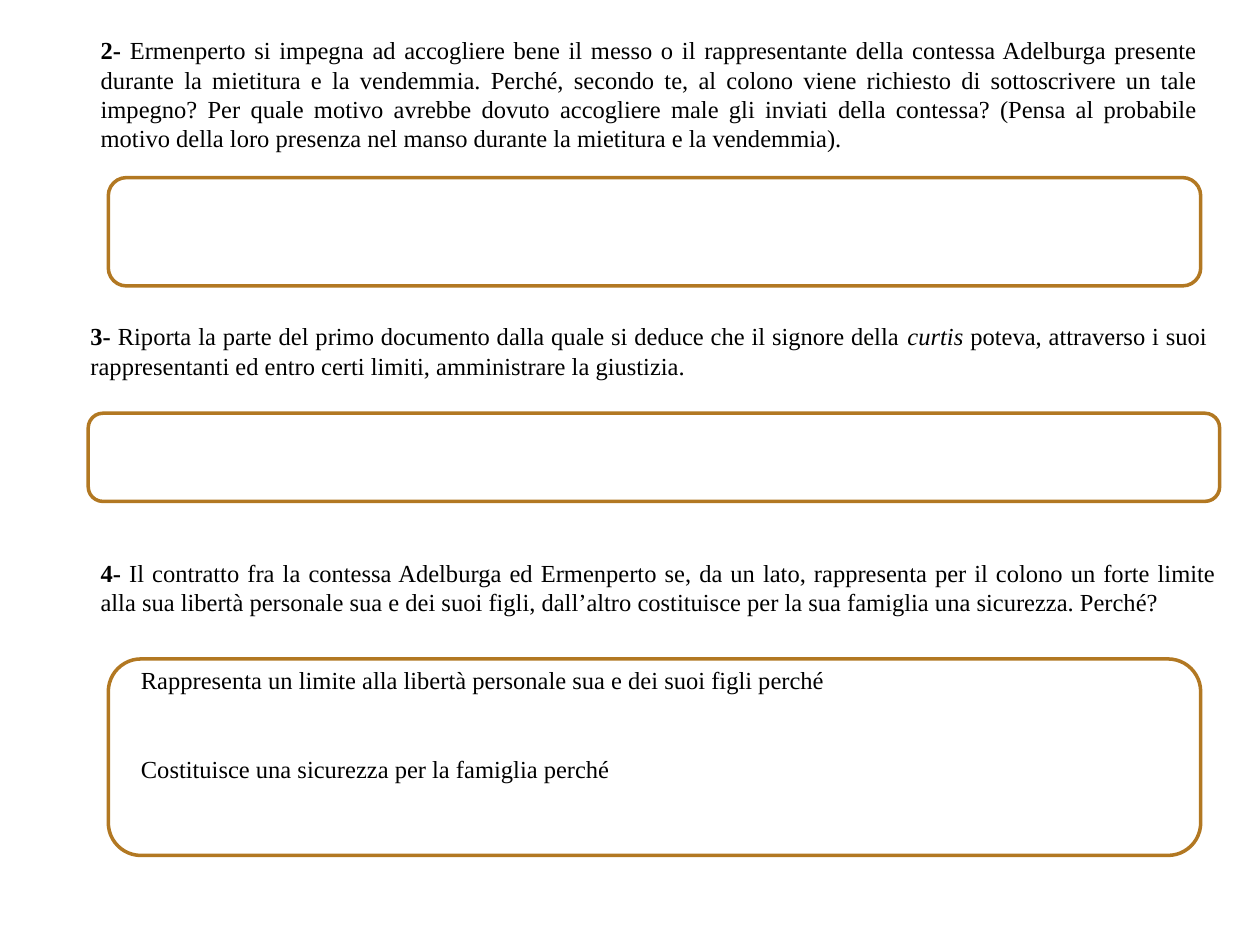
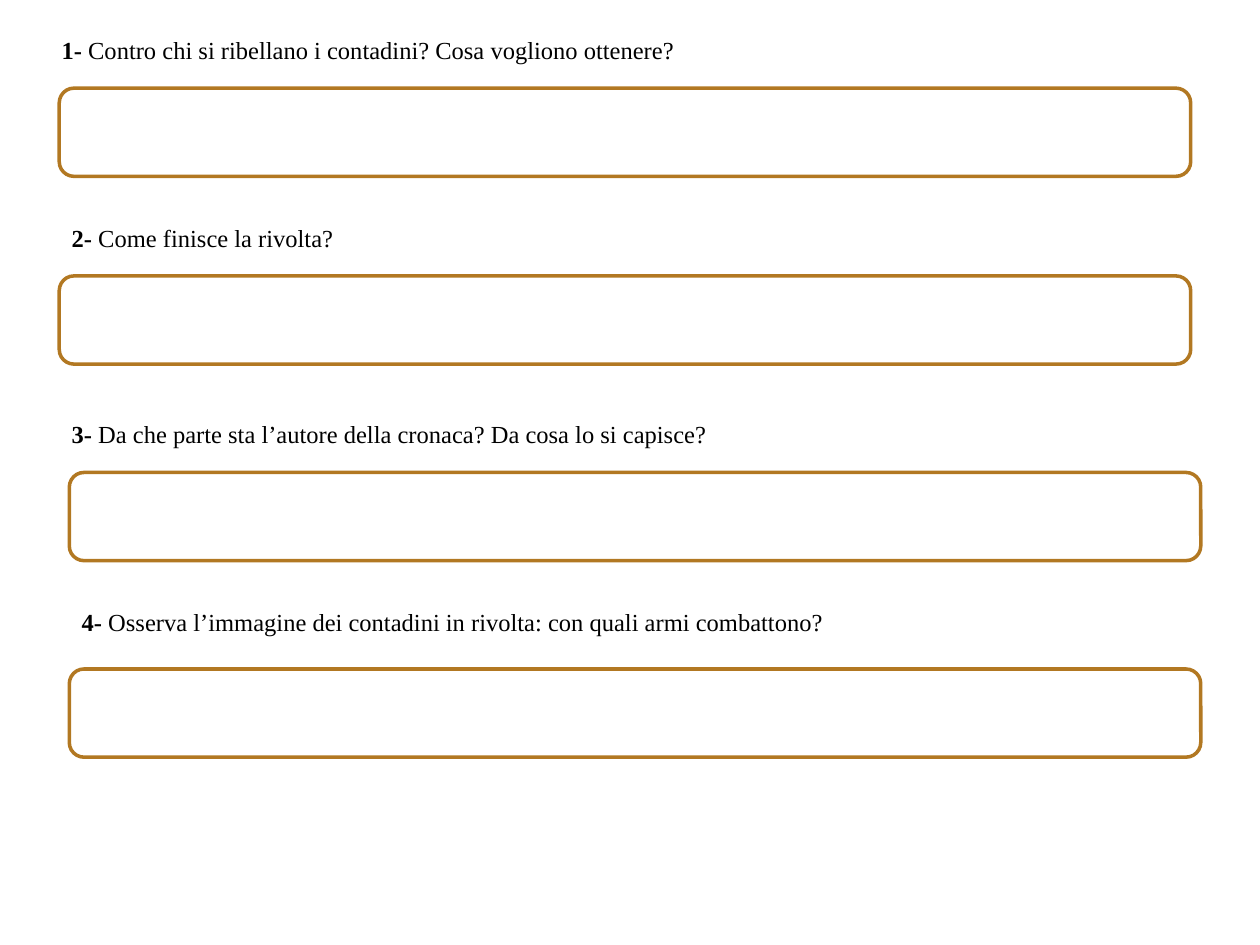
import pptx
import pptx.dml.color
import pptx.enum.shapes
import pptx.enum.text
import pptx.util

Inches = pptx.util.Inches
Pt = pptx.util.Pt

BLACK = pptx.dml.color.RGBColor(0x00, 0x00, 0x00)
WHITE = pptx.dml.color.RGBColor(0xFF, 0xFF, 0xFF)
OCHRE = pptx.dml.color.RGBColor(0xB2, 0x78, 0x22)

BLANK_LAYOUT = 6
LINE_HEIGHT = 0.235
TEXT_PADDING = 0.1


def write_run(paragraph, text, font="Times New Roman", size=14, color=BLACK,
              bold=False, italic=False):
    run = paragraph.add_run()
    run.text = text
    run.font.name = font
    run.font.size = Pt(size)
    run.font.color.rgb = color
    run.font.bold = bold
    run.font.italic = italic


class Worksheet:
    def __init__(self):
        self.presentation = pptx.Presentation()
        self.presentation.slide_width = Inches(10)
        self.presentation.slide_height = Inches(7.5)
        self.slide = None

    def add_slide(self):
        layout = self.presentation.slide_layouts[BLANK_LAYOUT]
        self.slide = self.presentation.slides.add_slide(layout)

    def add_text(self, left, top, width, paragraphs, lines=1, gap=0,
                 anchor=pptx.enum.text.MSO_ANCHOR.TOP):
        height = lines * LINE_HEIGHT + TEXT_PADDING
        shape = self.slide.shapes.add_textbox(
            Inches(left), Inches(top), Inches(width), Inches(height))
        frame = shape.text_frame
        frame.word_wrap = True
        frame.auto_size = pptx.enum.text.MSO_AUTO_SIZE.SHAPE_TO_FIT_TEXT
        frame.vertical_anchor = anchor
        for index, runs in enumerate(paragraphs):
            paragraph = frame.add_paragraph() if index else frame.paragraphs[0]
            paragraph.alignment = pptx.enum.text.PP_ALIGN.JUSTIFY
            if index:
                paragraph.space_before = Pt(gap)
            for text, style in runs:
                write_run(paragraph, text, **style)

    def add_question(self, number, left, top, width, *runs, lines=1):
        label = (f"{number}- ", {"bold": True})
        body = [run if isinstance(run, tuple) else (run, {}) for run in runs]
        self.add_text(left, top, width, [[label, *body]], lines=lines)

    def add_answer_box(self, left, top, width=8.98, height=0.7):
        shape = self.slide.shapes.add_shape(
            pptx.enum.shapes.MSO_SHAPE.ROUNDED_RECTANGLE,
            Inches(left), Inches(top), Inches(width), Inches(height))
        shape.shadow.inherit = False
        shape.fill.solid()
        shape.fill.fore_color.rgb = WHITE
        shape.line.color.rgb = OCHRE
        shape.line.width = Pt(2)


def build_contract_slide(sheet):
    sheet.add_slide()
    sheet.add_question(
        2, 0.7, 0.23, 8.91,
        "Ermenperto si impegna ad accogliere bene il messo o il rappresentante "
        "della contessa Adelburga presente durante la mietitura e la vendemmia. "
        "Perché, secondo te, al colono viene richiesto di sottoscrivere un tale "
        "impegno? Per quale motivo avrebbe dovuto accogliere male gli inviati "
        "della contessa? (Pensa al probabile motivo della loro presenza nel "
        "manso durante la mietitura e la vendemmia).",
        lines=4)
    sheet.add_answer_box(0.86, 1.41, width=8.67, height=0.86)
    sheet.add_question(
        3, 0.62, 2.5, 9.06,
        "Riporta la parte del primo documento dalla quale si deduce che il "
        "signore della ",
        ("curtis ", {"italic": True}),
        "poteva, attraverso i suoi rappresentanti ed entro certi limiti, "
        "amministrare la giustizia.",
        lines=2)
    sheet.add_answer_box(0.7, 3.28)
    sheet.add_question(
        4, 0.7, 4.38, 9.06,
        "Il contratto fra la contessa Adelburga ed Ermenperto se, da un lato, "
        "rappresenta per il colono un forte limite alla sua libertà personale "
        "sua e dei suoi figli, dall’altro costituisce per la sua famiglia una "
        "sicurezza. Perché?",
        lines=2)
    sheet.add_answer_box(0.86, 5.23, width=8.67, height=1.56)
    prompts = [
        "Rappresenta un limite alla libertà personale sua e dei suoi figli perché",
        "Costituisce una sicurezza per la famiglia perché",
    ]
    sheet.add_text(1.02, 5.23, 8.44, [[(prompt, {})] for prompt in prompts],
                   lines=4, gap=34, anchor=pptx.enum.text.MSO_ANCHOR.MIDDLE)


def build_revolt_slide(sheet):
    sheet.add_slide()
    questions = [
        (0.39, 0.23, 9.38, 0.47, 0.7,
         "Contro chi si ribellano i contadini? Cosa vogliono ottenere?"),
        (0.47, 1.72, 9.38, 0.47, 2.19, "Come finisce la rivolta?"),
        (0.47, 3.28, 9.38, 0.55, 3.75,
         "Da che parte sta l’autore della cronaca? Da cosa lo si capisce?"),
        (0.55, 4.77, 6.64, 0.55, 5.31,
         "Osserva l’immagine dei contadini in rivolta: con quali armi combattono?"),
    ]
    for number, question in enumerate(questions, start=1):
        left, top, width, box_left, box_top, text = question
        sheet.add_question(number, left, top, width, text)
        sheet.add_answer_box(box_left, box_top)


def main():
    sheet = Worksheet()
    build_contract_slide(sheet)
    build_revolt_slide(sheet)
    sheet.presentation.save("out.pptx")


if __name__ == "__main__":
    main()
